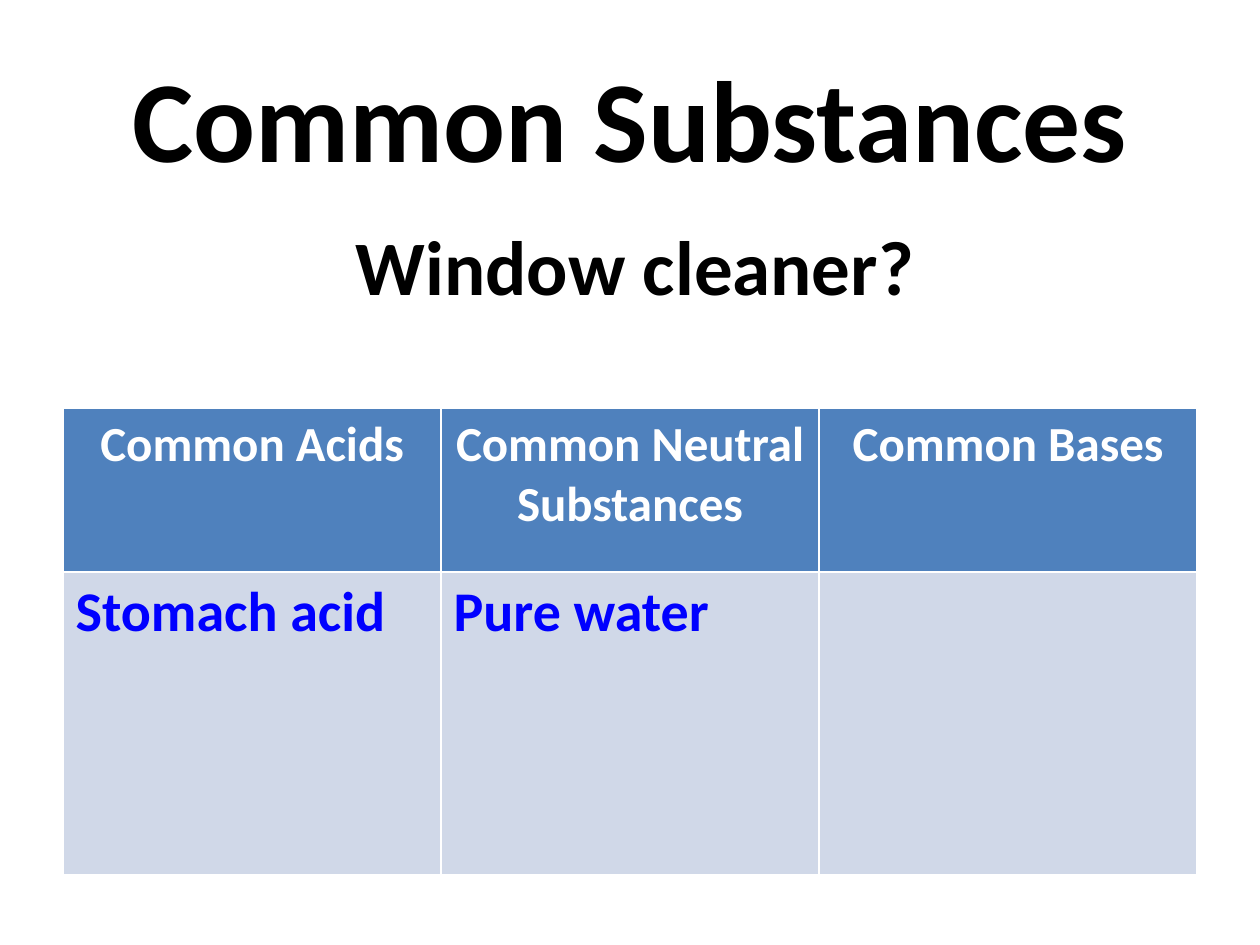
from pptx import Presentation
from pptx.dml.color import RGBColor
from pptx.enum.text import MSO_ANCHOR, PP_ALIGN
from pptx.util import Cm, Pt

BLACK = RGBColor(0x00, 0x00, 0x00)
WHITE = RGBColor(0xFF, 0xFF, 0xFF)
BLUE = RGBColor(0x00, 0x00, 0xFF)
HEADER_FILL = RGBColor(0x4F, 0x81, 0xBD)
BODY_FILL = RGBColor(0xD0, 0xD8, 0xE8)


def write_bold(text_frame, text, size, color, alignment):
    text_frame.text = text
    para = text_frame.paragraphs[0]
    para.alignment = alignment
    for span in para.runs:
        span.font.name = "Calibri"
        span.font.size = Pt(size)
        span.font.bold = True
        span.font.color.rgb = color


deck = Presentation()
deck.slide_width = Cm(25.4)
deck.slide_height = Cm(19.05)
page = deck.slides.add_slide(deck.slide_layouts[5])

title = page.shapes.title
title.left, title.top = Cm(1.27), Cm(0.76)
title.width, title.height = Cm(22.86), Cm(3.18)
title.text_frame.vertical_anchor = MSO_ANCHOR.MIDDLE
write_bold(title.text_frame, "Common Substances", 66, BLACK, PP_ALIGN.CENTER)

# The default table style supplies the white borders and the thick header rule.
table = page.shapes.add_table(2, 3, Cm(1.27), Cm(8.23), Cm(22.86), Cm(9.4)).table
table.horz_banding = False
rows = [
    (Cm(3.3), HEADER_FILL, 28, WHITE, PP_ALIGN.CENTER,
     ["Common Acids", "Common Neutral Substances", "Common Bases"]),
    (Cm(6.1), BODY_FILL, 32, BLUE, PP_ALIGN.LEFT,
     ["Stomach acid", "Pure water", ""]),
]
for row, (height, fill, size, color, alignment, texts) in zip(table.rows, rows):
    row.height = height
    for cell, text in zip(row.cells, texts):
        cell.fill.solid()
        cell.fill.fore_color.rgb = fill
        write_bold(cell.text_frame, text, size, color, alignment)

question = page.shapes.add_textbox(Cm(6.15), Cm(4.29), Cm(13.31), Cm(2.13))
question.text_frame.word_wrap = True
write_bold(question.text_frame, "Window cleaner?", 44, BLACK, PP_ALIGN.CENTER)

deck.save("out.pptx")
